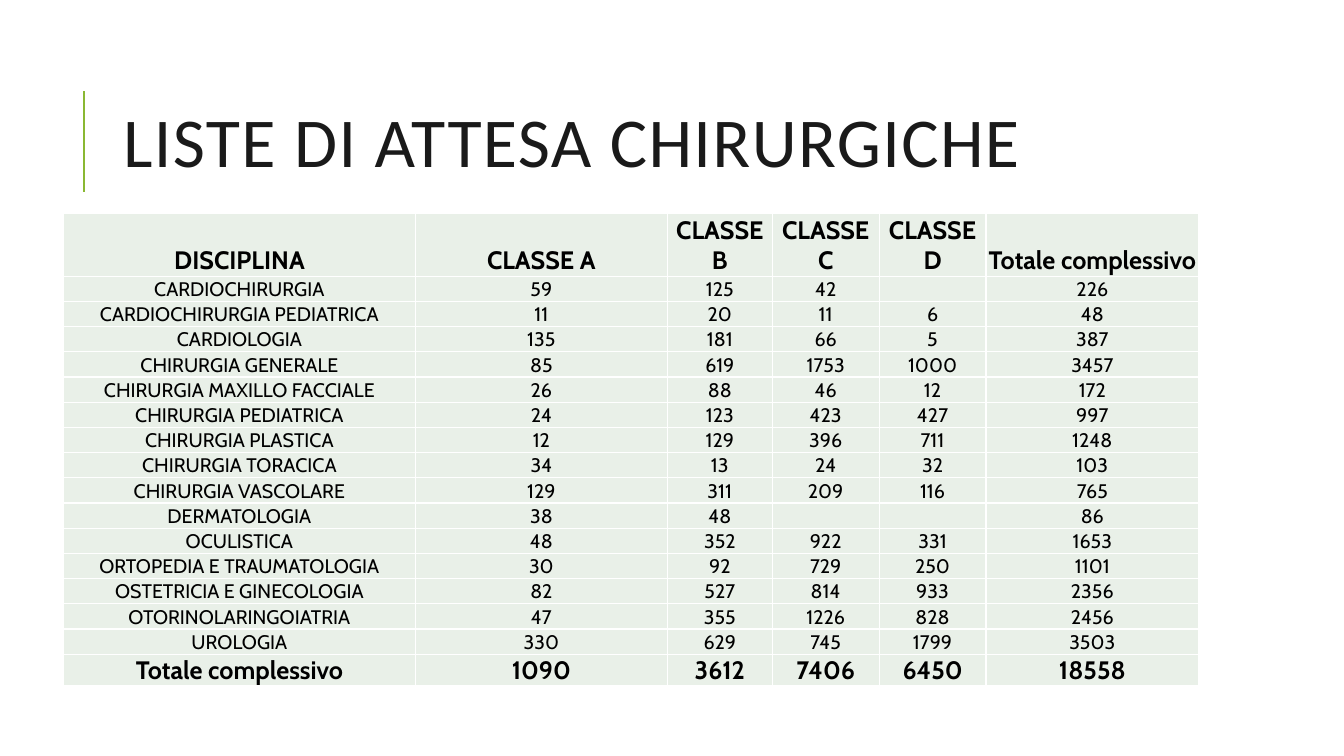
from dataclasses import dataclass

from lxml import etree
from pptx import Presentation
from pptx.dml.color import RGBColor
from pptx.enum import shapes, text
from pptx.oxml import ns
from pptx.util import Inches, Pt

TITLE = "LISTE DI ATTESA CHIRURGICHE"
HEADER = ("DISCIPLINA", "CLASSE A", "CLASSE B", "CLASSE C", "CLASSE D", "Totale complessivo")
DISCIPLINES = [
    ("CARDIOCHIRURGIA", 59, 125, 42, "", 226),
    ("CARDIOCHIRURGIA PEDIATRICA", 11, 20, 11, 6, 48),
    ("CARDIOLOGIA", 135, 181, 66, 5, 387),
    ("CHIRURGIA GENERALE", 85, 619, 1753, 1000, 3457),
    ("CHIRURGIA MAXILLO FACCIALE", 26, 88, 46, 12, 172),
    ("CHIRURGIA PEDIATRICA", 24, 123, 423, 427, 997),
    ("CHIRURGIA PLASTICA", 12, 129, 396, 711, 1248),
    ("CHIRURGIA TORACICA", 34, 13, 24, 32, 103),
    ("CHIRURGIA VASCOLARE", 129, 311, 209, 116, 765),
    ("DERMATOLOGIA", 38, 48, "", "", 86),
    ("OCULISTICA", 48, 352, 922, 331, 1653),
    ("ORTOPEDIA E TRAUMATOLOGIA", 30, 92, 729, 250, 1101),
    ("OSTETRICIA E GINECOLOGIA", 82, 527, 814, 933, 2356),
    ("OTORINOLARINGOIATRIA", 47, 355, 1226, 828, 2456),
    ("UROLOGIA", 330, 629, 745, 1799, 3503),
]
TOTALS = ("Totale complessivo", 1090, 3612, 7406, 6450, 18558)
COLUMN_WIDTHS = (3.49, 2.5, 1.04, 1.06, 1.06, 2.11)
HEADER_HEIGHT, ROW_HEIGHT, TOTAL_HEIGHT = 0.61, 0.25, 0.31


@dataclass(frozen=True)
class Theme:
    title_font: str = "Calibri"
    table_font: str = "Cabin"
    title_size: int = 50
    strong_size: int = 18
    body_size: int = 14
    title_color: str = "1A1A1A"
    table_color: str = "000000"
    accent: str = "8AB833"
    cell_fill: str = "E9F0E8"
    border: str = "FFFFFF"


THEME = Theme()


def set_font(font, name, size, color, bold=False):
    font.name, font.size, font.bold = name, Pt(size), bold
    font.color.rgb = RGBColor.from_string(color)


def add_title(slide):
    title = slide.shapes.title
    title.left, title.top = Inches(1.12), Inches(0.64)
    title.width, title.height = Inches(10.63), Inches(1.64)
    frame = title.text_frame
    frame.text = TITLE
    frame.auto_size = text.MSO_AUTO_SIZE.NONE
    frame.vertical_anchor = text.MSO_ANCHOR.MIDDLE
    paragraph = frame.paragraphs[0]
    paragraph.alignment = text.PP_ALIGN.LEFT
    paragraph.line_spacing = 0.8
    set_font(paragraph.font, THEME.title_font, THEME.title_size, THEME.title_color)
    paragraph.runs[0].font._element.set("spc", "100")


def add_accent_line(slide):
    line = slide.shapes.add_connector(
        shapes.MSO_CONNECTOR.STRAIGHT, Inches(0.83), Inches(1.9), Inches(0.83), Inches(0.9))
    line.line.color.rgb = RGBColor.from_string(THEME.accent)
    line.line.width = Pt(1.5)
    etree.SubElement(line._element.spPr, ns.qn("a:effectLst"))


def add_borders(cell):
    properties = cell._tc.get_or_add_tcPr()
    for index, side in enumerate(("lnL", "lnR", "lnT", "lnB")):
        border = etree.Element(ns.qn(f"a:{side}"), w=str(Pt(1)))
        fill = etree.SubElement(border, ns.qn("a:solidFill"))
        etree.SubElement(fill, ns.qn("a:srgbClr"), val=THEME.border)
        properties.insert(index, border)


def format_cell(cell, value, strong):
    cell.text = str(value)
    cell.margin_left = cell.margin_right = cell.margin_top = Inches(0.01)
    cell.margin_bottom = 0
    cell.vertical_anchor = text.MSO_ANCHOR.BOTTOM
    cell.fill.solid()
    cell.fill.fore_color.rgb = RGBColor.from_string(THEME.cell_fill)
    add_borders(cell)
    paragraph = cell.text_frame.paragraphs[0]
    paragraph.alignment = text.PP_ALIGN.CENTER
    size = THEME.strong_size if strong else THEME.body_size
    set_font(paragraph.font, THEME.table_font, size, THEME.table_color, strong)
    if value == "":
        etree.SubElement(paragraph._p, ns.qn("a:endParaRPr"), sz=str(size * 100))


def add_waiting_table(slide):
    rows = [HEADER, *DISCIPLINES, TOTALS]
    heights = [HEADER_HEIGHT, *[ROW_HEIGHT] * len(DISCIPLINES), TOTAL_HEIGHT]
    table = slide.shapes.add_table(
        len(rows), len(HEADER), Inches(0.63), Inches(2.12),
        Inches(sum(COLUMN_WIDTHS)), Inches(sum(heights))).table
    for column, width in zip(table.columns, COLUMN_WIDTHS):
        column.width = Inches(width)
    for row, height, values in zip(table.rows, heights, rows):
        row.height = Inches(height)
        for cell, value in zip(row.cells, values):
            format_cell(cell, value, values in (HEADER, TOTALS))


def main():
    presentation = Presentation()
    presentation.slide_width, presentation.slide_height = Inches(13.33), Inches(7.5)
    slide = presentation.slides.add_slide(presentation.slide_layouts[5])
    add_accent_line(slide)
    add_title(slide)
    add_waiting_table(slide)
    presentation.save("out.pptx")


if __name__ == "__main__":
    main()
